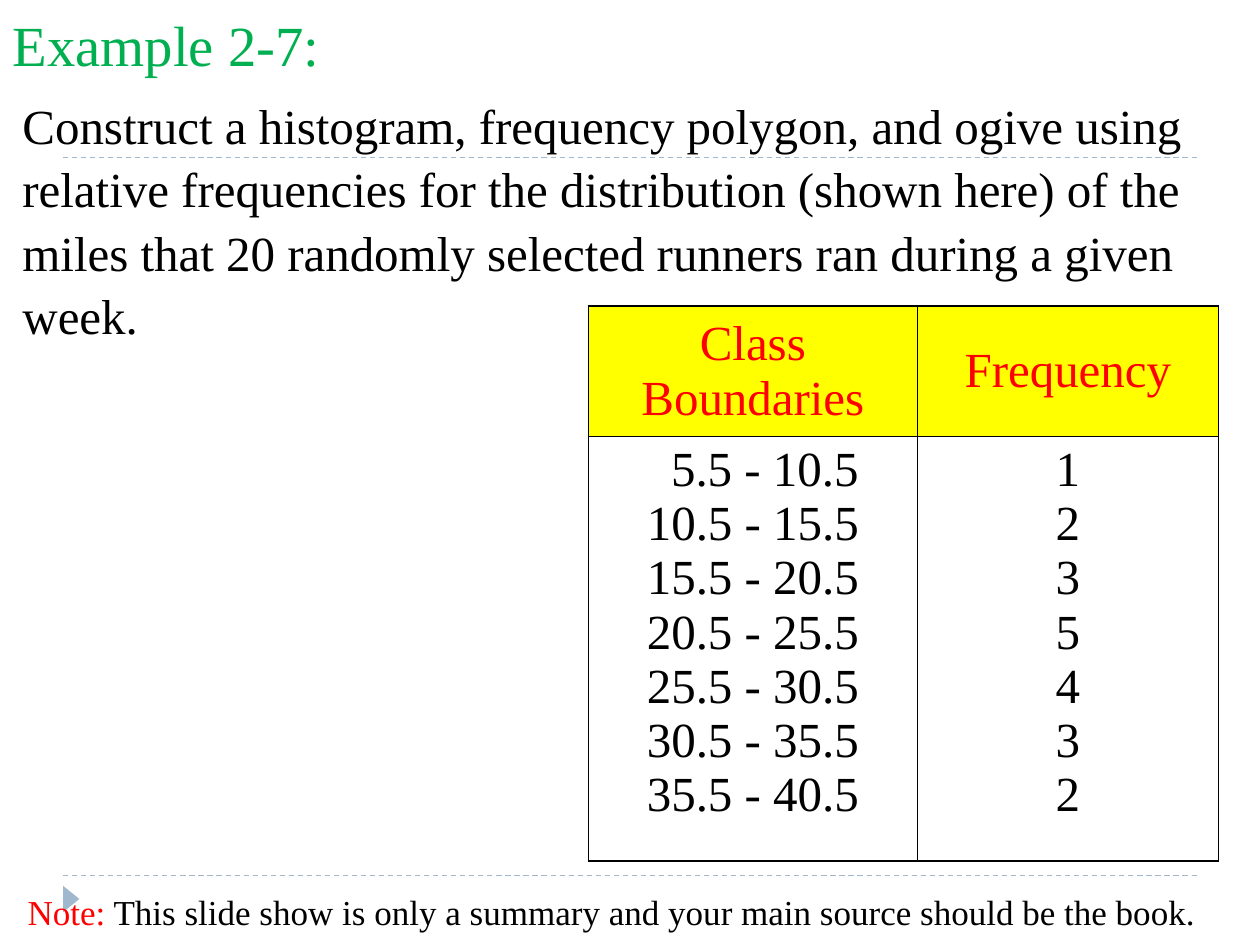
from dataclasses import dataclass

from lxml import etree
from pptx import Presentation
from pptx.dml.color import RGBColor
from pptx.enum.dml import MSO_LINE
from pptx.enum.shapes import MSO_CONNECTOR, MSO_SHAPE
from pptx.enum.text import MSO_ANCHOR, MSO_AUTO_SIZE, PP_ALIGN
from pptx.oxml.ns import qn
from pptx.util import Emu, Inches, Pt

STRAIGHT = MSO_CONNECTOR.STRAIGHT
TRIANGLE = MSO_SHAPE.ISOSCELES_TRIANGLE
DASH = MSO_LINE.DASH
LEFT, CENTER = PP_ALIGN.LEFT, PP_ALIGN.CENTER
TOP, MIDDLE, BOTTOM = MSO_ANCHOR.TOP, MSO_ANCHOR.MIDDLE, MSO_ANCHOR.BOTTOM

COLORS = {
    "heading": "00B050",
    "text": "000000",
    "accent": "FF0000",
    "header": "FFFF00",
    "rule": "9FB8CD",
}
FONT = "Times New Roman"
WIDTH, HEIGHT = 10, 7.5
MARGIN = 0.05 * WIDTH
BODY_SIZE = 28


@dataclass(frozen=True)
class Box:
    left: float
    top: float
    width: float
    height: float

    def lengths(self) -> tuple:
        return tuple(Inches(v) for v in (self.left, self.top, self.width, self.height))


@dataclass(frozen=True)
class Words:
    text: str
    color: str
    size: float = BODY_SIZE


@dataclass(frozen=True)
class MileClass:
    boundaries: str
    frequency: int
    indent: float = 0


HEADERS = ("Class Boundaries", "Frequency")
MILE_CLASSES = (
    MileClass("5.5 - 10.5", 1, indent=0.19),
    MileClass("10.5 - 15.5", 2),
    MileClass("15.5 - 20.5", 3),
    MileClass("20.5 - 25.5", 5),
    MileClass("25.5 - 30.5", 4),
    MileClass("30.5 - 35.5", 3),
    MileClass("35.5 - 40.5", 2),
)


def rgb(name: str) -> RGBColor:
    return RGBColor.from_string(COLORS[name])


def write(paragraph, *pieces: Words, align=LEFT) -> None:
    paragraph.alignment = align
    for piece in pieces:
        run = paragraph.add_run()
        run.text = piece.text
        run.font.name = FONT
        run.font.size = Pt(piece.size)
        run.font.color.rgb = rgb(piece.color)


def add_rule(slide, top: float) -> None:
    rule = slide.shapes.add_connector(
        STRAIGHT, Inches(MARGIN), Inches(top), Inches(WIDTH - MARGIN), Inches(top))
    rule.line.color.rgb = rgb("rule")
    rule.line.width = Pt(0.75)
    rule.line.dash_style = DASH
    etree.SubElement(rule._element.spPr, qn("a:effectLst"))


def add_marker(slide, box: Box) -> None:
    marker = slide.shapes.add_shape(TRIANGLE, *box.lengths())
    marker.rotation = 90
    marker.shadow.inherit = False
    marker.fill.solid()
    marker.fill.fore_color.rgb = rgb("rule")
    marker.line.fill.background()


def add_text(slide, box: Box, *pieces: Words, spacing: float = 1.0) -> None:
    frame = slide.shapes.add_textbox(*box.lengths()).text_frame
    frame.word_wrap = True
    paragraph = frame.paragraphs[0]
    paragraph.line_spacing = spacing
    write(paragraph, *pieces)


def set_title(slide, box: Box, words: Words) -> None:
    title = slide.shapes.title
    title.left, title.top, title.width, title.height = box.lengths()
    frame = title.text_frame
    frame.auto_size = MSO_AUTO_SIZE.NONE
    frame.vertical_anchor = BOTTOM
    write(frame.paragraphs[0], words)


def format_cell(cell, fill: str = "", anchor=TOP) -> None:
    cell.vertical_anchor = anchor
    properties = cell._tc.get_or_add_tcPr()
    for side in ("lnL", "lnR", "lnT", "lnB"):
        border = etree.SubElement(properties, qn(f"a:{side}"), w=str(Pt(1)))
        solid = etree.SubElement(border, qn("a:solidFill"))
        etree.SubElement(solid, qn("a:srgbClr"), val=COLORS["text"])
    if fill:
        cell.fill.solid()
        cell.fill.fore_color.rgb = rgb(fill)
    else:
        cell.fill.background()


def add_distribution(slide, box: Box, columns: tuple, rows: tuple) -> None:
    table = slide.shapes.add_table(len(rows), len(columns), *box.lengths()).table
    table.horz_banding = False
    for column, width in zip(table.columns, columns):
        column.width = Inches(width)
    for row, height in zip(table.rows, rows):
        row.height = Inches(height)

    # Header row
    for index, header in enumerate(HEADERS):
        cell = table.cell(0, index)
        format_cell(cell, "header", MIDDLE)
        write(cell.text_frame.paragraphs[0], Words(header, "accent"), align=CENTER)

    # One paragraph per class in each column
    cells = [table.cell(1, index) for index in range(len(columns))]
    for cell in cells:
        format_cell(cell)
    for number, mile_class in enumerate(MILE_CLASSES):
        values = (mile_class.boundaries, str(mile_class.frequency))
        indents = (mile_class.indent, 0)
        for cell, value, indent in zip(cells, values, indents):
            frame = cell.text_frame
            paragraph = frame.add_paragraph() if number else frame.paragraphs[0]
            write(paragraph, Words(value, "text"), align=CENTER)
            if indent:
                paragraph._p.get_or_add_pPr().set("marL", str(Emu(Inches(indent))))


def main() -> None:
    deck = Presentation()
    deck.slide_width, deck.slide_height = Inches(WIDTH), Inches(HEIGHT)
    slide = deck.slides.add_slide(deck.slide_layouts[5])

    # Background rules and corner marker
    for top in (6.95, 1.25):
        add_rule(slide, top)
    add_marker(slide, Box(0.46, 7.07, 0.21, 0.13))

    # Title and exercise
    set_title(slide, Box(0, -0.28, 2.83, 0.95), Words("Example 2-7:", "heading", 32.4))
    add_text(
        slide, Box(0.08, 0.67, WIDTH, 2.17),
        Words("Construct a histogram, frequency polygon, and ogive using relative "
              "frequencies for the distribution (shown here) of the miles that 20 "
              "randomly selected runners ran during a given week.", "text"),
        spacing=1.08)

    # Frequency distribution
    add_distribution(slide, Box(4.67, 2.43, 5, 4.08), columns=(2.61, 2.39), rows=(0.96, 3.12))

    # Note at the foot
    add_text(
        slide, Box(0.12, 7.02, 9.75, 0.44),
        Words("Note:", "accent", 20),
        Words(" This slide show is only a summary and your main source should be the book.",
              "text", 20))

    deck.save("out.pptx")


if __name__ == "__main__":
    main()
